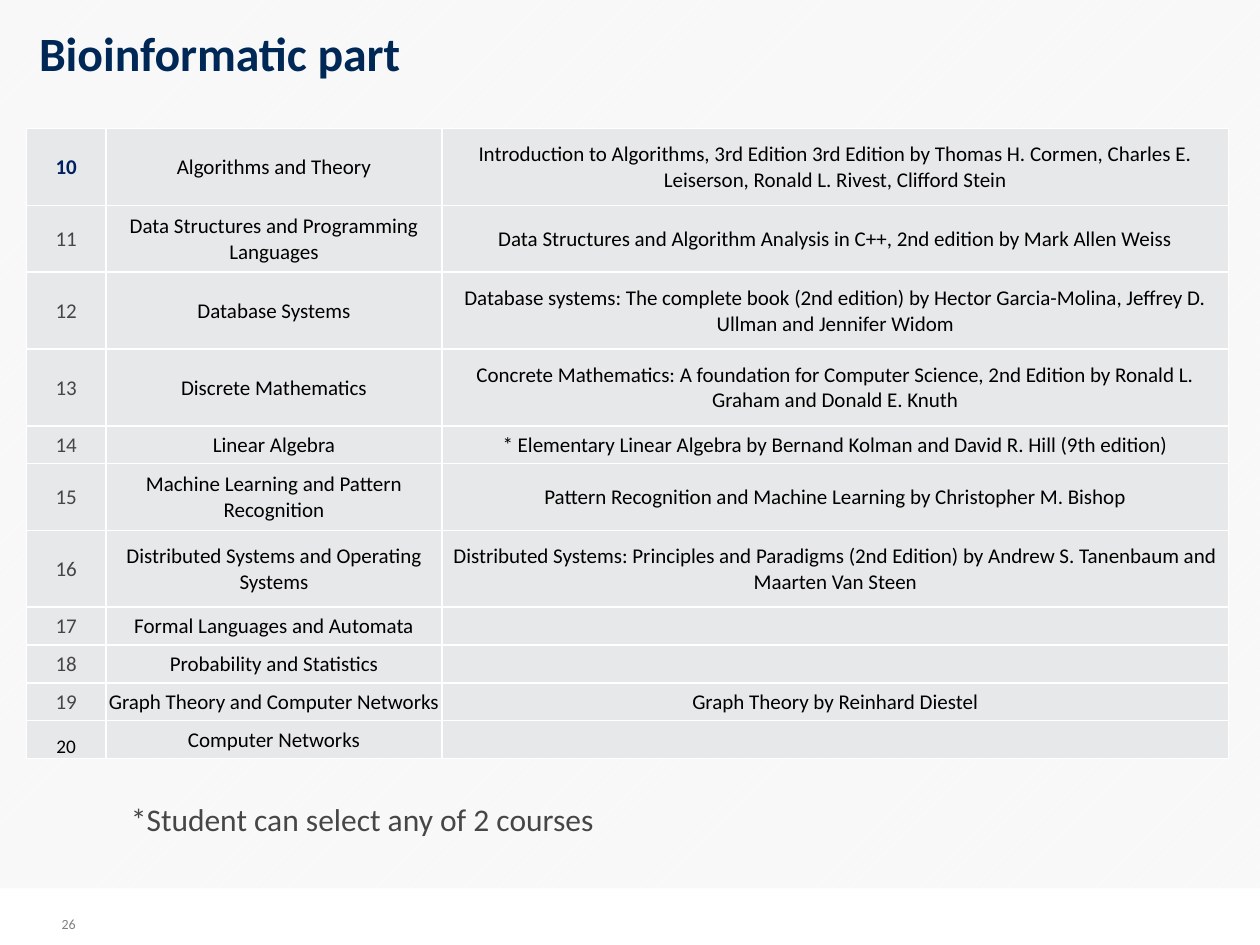
from lxml import etree
from pptx import Presentation
from pptx.dml.color import RGBColor
from pptx.enum import dml, shapes, text
from pptx.oxml.ns import qn
from pptx.util import Inches, Pt

NAVY = RGBColor(0x00, 0x28, 0x56)
DEEP_BLUE = RGBColor(0x00, 0x20, 0x60)
DARK_GREY = RGBColor(0x46, 0x46, 0x46)
MID_GREY = RGBColor(0x80, 0x80, 0x80)
CELL_GREY = RGBColor(0xE7, 0xE8, 0xE9)
PALE_GREY = RGBColor(0xF8, 0xF8, 0xF8)
WHITE = RGBColor(0xFF, 0xFF, 0xFF)
BLACK = RGBColor(0x00, 0x00, 0x00)

FIRST_NUMBER = 10
COLUMN_WIDTHS = [0.63, 2.67, 6.24]
# Row height, course, textbook
COURSES = [
    (0.61, "Algorithms and Theory",
     "Introduction to Algorithms, 3rd Edition 3rd Edition by Thomas H. Cormen, "
     "Charles E. Leiserson, Ronald L. Rivest, Clifford Stein"),
    (0.53, "Data Structures and Programming Languages",
     "Data Structures and Algorithm Analysis in C++, 2nd edition by Mark Allen Weiss"),
    (0.61, "Database Systems",
     "Database systems: The complete book (2nd edition) by Hector Garcia-Molina, "
     "Jeffrey D. Ullman and Jennifer Widom"),
    (0.61, "Discrete Mathematics",
     "Concrete Mathematics: A foundation for Computer Science, 2nd Edition by "
     "Ronald L. Graham and Donald E. Knuth"),
    (0.3, "Linear Algebra",
     "* Elementary Linear Algebra by Bernand Kolman and David R. Hill (9th edition)"),
    (0.53, "Machine Learning and Pattern Recognition",
     "Pattern Recognition and Machine Learning by Christopher M. Bishop"),
    (0.61, "Distributed Systems and Operating Systems",
     "Distributed Systems: Principles and Paradigms (2nd Edition) by "
     "Andrew S. Tanenbaum and Maarten Van Steen"),
    (0.3, "Formal Languages and Automata", ""),
    (0.3, "Probability and Statistics", ""),
    (0.3, "Graph Theory and Computer Networks", "Graph Theory by Reinhard Diestel"),
    (0.3, "Computer Networks", ""),
]


def write(tf, content, size=12, color=BLACK, bold=False,
          align=text.PP_ALIGN.LEFT, spacing=None):
    p = tf.paragraphs[0]
    p.alignment = align
    if spacing:
        p.line_spacing = spacing
    if not content:
        etree.SubElement(p._p, qn("a:endParaRPr"), sz=str(size * 100))
        return
    r = p.add_run()
    r.text = content
    r.font.name = "Calibri"
    r.font.size = Pt(size)
    r.font.bold = bold
    r.font.color.rgb = color


def add_title(s, content):
    sp = s.shapes.title
    sp.left, sp.top, sp.width, sp.height = map(Inches, (0.21, 0.23, 11.5, 0.56))
    tf = sp.text_frame
    tf.auto_size = text.MSO_AUTO_SIZE.NONE
    tf.vertical_anchor = text.MSO_ANCHOR.TOP
    write(tf, content, size=27.3, color=NAVY, bold=True, spacing=0.8)


def add_text(s, box, content, anchor=text.MSO_ANCHOR.TOP, wrap=True, **fmt):
    tf = s.shapes.add_textbox(*map(Inches, box)).text_frame
    tf.word_wrap = wrap
    tf.vertical_anchor = anchor
    write(tf, content, **fmt)


def add_footer_band(s):
    sp = s.shapes.add_shape(shapes.MSO_SHAPE.RECTANGLE, 0, Inches(7.05),
                            Inches(10), Inches(0.45))
    sp.shadow.inherit = False
    sp.fill.solid()
    sp.fill.fore_color.rgb = WHITE
    sp.line.fill.background()


def add_borders(cell):
    tc_pr = cell._tc.get_or_add_tcPr()
    for side in ("lnL", "lnR", "lnT", "lnB"):
        ln = etree.SubElement(tc_pr, qn(f"a:{side}"), w=str(Pt(1)))
        fill = etree.SubElement(ln, qn("a:solidFill"))
        etree.SubElement(fill, qn("a:srgbClr"), val=str(WHITE))


def fill_cell(cell, content, anchor=text.MSO_ANCHOR.MIDDLE, **fmt):
    add_borders(cell)
    cell.fill.solid()
    cell.fill.fore_color.rgb = CELL_GREY
    cell.margin_left = cell.margin_right = cell.margin_top = Inches(0.01)
    cell.margin_bottom = 0
    cell.vertical_anchor = anchor
    write(cell.text_frame, content, align=text.PP_ALIGN.CENTER, **fmt)


def add_course_table(s):
    table = s.shapes.add_table(len(COURSES), len(COLUMN_WIDTHS), Inches(0.21),
                               Inches(1.02), Inches(9.54), Inches(5)).table
    table.first_row = table.horz_banding = False
    for column, width in zip(table.columns, COLUMN_WIDTHS):
        column.width = Inches(width)
    number_formats = {
        0: dict(color=DEEP_BLUE, bold=True),
        len(COURSES) - 1: dict(size=11, anchor=text.MSO_ANCHOR.BOTTOM),
    }
    for i, (height, course, book) in enumerate(COURSES):
        table.rows[i].height = Inches(height)
        fill_cell(table.cell(i, 0), str(FIRST_NUMBER + i),
                  **number_formats.get(i, dict(color=DARK_GREY)))
        fill_cell(table.cell(i, 1), course)
        fill_cell(table.cell(i, 2), book)


def main():
    prs = Presentation()
    prs.slide_width, prs.slide_height = Inches(10), Inches(7.5)
    s = prs.slides.add_slide(prs.slide_layouts[5])
    bg = s.background.fill
    bg.patterned()
    bg.pattern = dml.MSO_PATTERN.PERCENT_5
    bg.fore_color.rgb = WHITE
    bg.back_color.rgb = PALE_GREY

    add_footer_band(s)
    add_text(s, (0.39, 7.1, 0.36, 0.35), "26", anchor=text.MSO_ANCHOR.BOTTOM,
             size=8, color=MID_GREY)
    add_title(s, "Bioinformatic part")
    add_text(s, (0.94, 6.3, 3.92, 0.4), "*Student can select any of 2 courses",
             wrap=False, size=18, color=DARK_GREY)
    add_course_table(s)
    prs.save("out.pptx")


if __name__ == "__main__":
    main()
